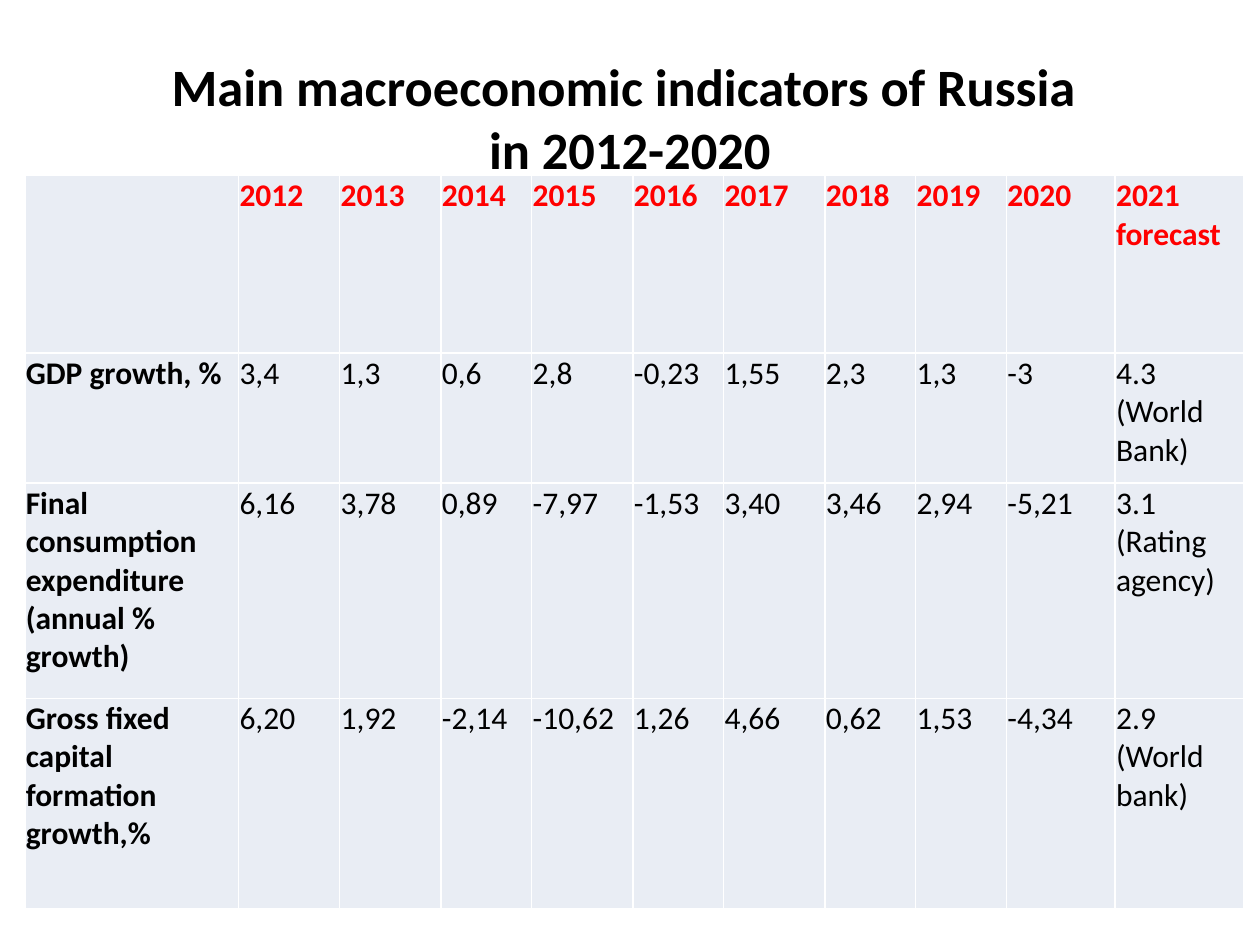
from lxml import etree
from pptx import Presentation
from pptx import util as u
from pptx.dml.color import RGBColor
from pptx.enum import text
from pptx.oxml import ns

BLACK = RGBColor(0, 0, 0)
RED = RGBColor(0xFF, 0, 0)
PALE = RGBColor(0xE9, 0xED, 0xF4)
WHITE = RGBColor(0xFF, 0xFF, 0xFF)


def write(frame, words, size=18, bold=False, color=BLACK, align=text.PP_ALIGN.LEFT):
    frame.text = words
    for par in frame.paragraphs:
        par.alignment = align
        for run in par.runs:
            run.font.name = "Calibri"
            run.font.size = u.Pt(size)
            run.font.bold = bold
            run.font.color.rgb = color


def edge(cell):
    props = cell._tc.get_or_add_tcPr()
    for side in ("a:lnL", "a:lnR", "a:lnT", "a:lnB"):
        line = etree.SubElement(props, ns.qn(side), w=str(u.Pt(1)))
        fill = etree.SubElement(line, ns.qn("a:solidFill"))
        etree.SubElement(fill, ns.qn("a:srgbClr"), val=str(WHITE))


deck = Presentation()
deck.slide_width, deck.slide_height = u.Cm(25.4), u.Cm(19.05)
slide = deck.slides.add_slide(deck.slide_layouts[5])

# Title
title = slide.shapes.title
title.left, title.top = u.Cm(1.27), u.Cm(0.76)
title.width, title.height = u.Cm(22.86), u.Cm(3.18)
title.text_frame.vertical_anchor = text.MSO_ANCHOR.MIDDLE
write(title.text_frame, "Main macroeconomic indicators of Russia \vin 2012-2020",
      size=30, bold=True, align=text.PP_ALIGN.CENTER)

# Table content
years = [str(year) for year in range(2012, 2021)]
rows = [
    ["", *years, "2021\nforecast"],
    ["GDP growth, %", "3,4", "1,3", "0,6", "2,8", "-0,23", "1,55", "2,3",
     "1,3", "-3", "4.3 (World Bank)"],
    ["Final consumption expenditure (annual % growth)", "6,16", "3,78", "0,89",
     "-7,97", "-1,53", "3,40", "3,46", "2,94", "-5,21", "3.1\n(Rating agency)"],
    ["Gross fixed capital formation growth,%", "6,20", "1,92", "-2,14", "-10,62",
     "1,26", "4,66", "0,62", "1,53", "-4,34", "2.9 (World bank)"],
]
wides = [4.31, 2.04, 2.04, 1.83, 2.04, 1.83, 2.04, 1.83, 1.83, 2.19, 2.6]
highs = [3.58, 2.62, 4.34, 4.24]

# Table grid
grid = slide.shapes.add_table(len(rows), len(wides), u.Cm(0.5), u.Cm(3.54),
                              u.Cm(sum(wides)), u.Cm(sum(highs))).table
grid.first_row = grid.horz_banding = False
for col, wide in zip(grid.columns, wides):
    col.width = u.Cm(wide)
for row, high in zip(grid.rows, highs):
    row.height = u.Cm(high)

# Table cells
last = len(rows) - 1
for r, row in enumerate(rows):
    for c, words in enumerate(row):
        cell = grid.cell(r, c)
        edge(cell)
        cell.fill.solid()
        cell.fill.fore_color.rgb = PALE
        cell.margin_left = cell.margin_right = cell.margin_top = u.Cm(0.02)
        cell.margin_bottom = 0
        just = r == last and 0 < c < len(years) + 1
        write(cell.text_frame, words, bold=r == 0 or c == 0,
              color=RED if r == 0 else BLACK,
              align=text.PP_ALIGN.JUSTIFY if just else text.PP_ALIGN.LEFT)

deck.save("out.pptx")
